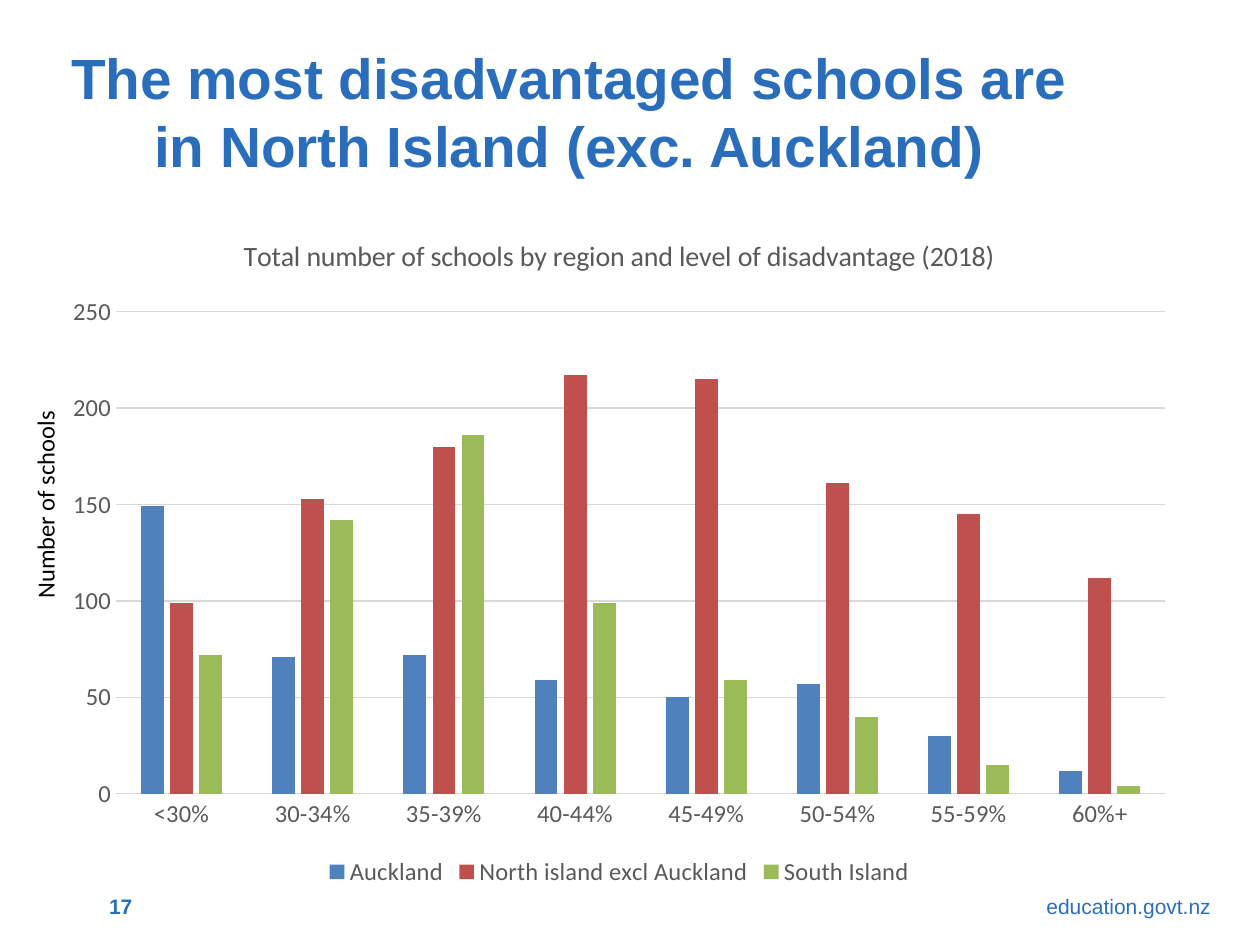
from pptx import Presentation
from pptx.chart.data import CategoryChartData
from pptx.dml.color import RGBColor
from pptx.enum.chart import XL_CHART_TYPE, XL_LEGEND_POSITION, XL_TICK_MARK
from pptx.enum.text import MSO_ANCHOR, MSO_AUTO_SIZE, PP_ALIGN
from pptx.util import Inches, Pt

COLUMN_CLUSTERED = XL_CHART_TYPE.COLUMN_CLUSTERED
LEGEND_BOTTOM = XL_LEGEND_POSITION.BOTTOM
NO_TICK = XL_TICK_MARK.NONE
TOP, MIDDLE = MSO_ANCHOR.TOP, MSO_ANCHOR.MIDDLE
NO_AUTOFIT = MSO_AUTO_SIZE.NONE
LEFT, CENTER, RIGHT = PP_ALIGN.LEFT, PP_ALIGN.CENTER, PP_ALIGN.RIGHT

THEME = {
    "brand": RGBColor.from_string("2A6EBB"),
    "black": RGBColor.from_string("000000"),
    "label": RGBColor.from_string("595959"),
    "grid": RGBColor.from_string("D9D9D9"),
    "series": [RGBColor.from_string(c) for c in ("4F81BD", "C0504D", "9BBB59")],
    "heading_font": "Arial",
    "chart_font": "Calibri",
    "title_size": Pt(32.4),
    "chart_title_size": Pt(16),
    "chart_size": Pt(14),
    "footer_size": Pt(12),
    "line_width": Pt(0.75),
}


def format_font(font, name, size, color, bold=False):
    for attribute, value in {"name": name, "size": size, "bold": bold}.items():
        setattr(font, attribute, value)
    font.color.rgb = color


def write_text(shape, text, alignment, anchor, font_format):
    text_frame = shape.text_frame
    frame_format = {"word_wrap": True, "auto_size": NO_AUTOFIT, "vertical_anchor": anchor}
    for attribute, value in frame_format.items():
        setattr(text_frame, attribute, value)
    paragraph = text_frame.paragraphs[0]
    paragraph.alignment = alignment
    run = paragraph.add_run()
    run.text = text
    format_font(run.font, *font_format)


presentation = Presentation()
presentation.slide_width = Inches(10)
presentation.slide_height = Inches(7.5)
slide = presentation.slides.add_slide(presentation.slide_layouts[5])

title = slide.shapes.title
title_place = {"left": 0.28, "top": 0.27, "width": 8.47, "height": 1.22}
for attribute, value in title_place.items():
    setattr(title, attribute, Inches(value))
title_format = (THEME["heading_font"], THEME["title_size"], THEME["brand"], True)
write_text(title, "The most disadvantaged schools are in North Island (exc. Auckland)",
           CENTER, MIDDLE, title_format)

chart_data = CategoryChartData()
chart_data.categories = ["<30%", "30-34%", "35-39%", "40-44%",
                         "45-49%", "50-54%", "55-59%", "60%+"]
schools_by_region = {
    "Auckland": [149, 71, 72, 59, 50, 57, 30, 12],
    "North island excl Auckland": [99, 153, 180, 217, 215, 161, 145, 112],
    "South Island": [72, 142, 186, 99, 59, 40, 15, 4],
}
for region, schools in schools_by_region.items():
    chart_data.add_series(region, schools)

chart = slide.shapes.add_chart(COLUMN_CLUSTERED, Inches(0.4), Inches(1.68),
                               Inches(9.03), Inches(5.4), chart_data).chart
format_font(chart.font, THEME["chart_font"], THEME["chart_size"], THEME["black"])

chart.has_title = True
chart.chart_title.include_in_layout = False
chart_title_paragraph = chart.chart_title.text_frame.paragraphs[0]
chart_title_run = chart_title_paragraph.add_run()
chart_title_run.text = "Total number of schools by region and level of disadvantage (2018)"
format_font(chart_title_run.font, THEME["chart_font"], THEME["chart_title_size"], THEME["label"])

chart.has_legend = True
chart.legend.position = LEGEND_BOTTOM
chart.legend.include_in_layout = False

category_axis, value_axis = chart.category_axis, chart.value_axis
for axis in (category_axis, value_axis):
    axis.major_tick_mark = NO_TICK
    axis.minor_tick_mark = NO_TICK
for labelled in (category_axis.tick_labels, value_axis.tick_labels, chart.legend):
    format_font(labelled.font, THEME["chart_font"], THEME["chart_size"], THEME["label"])

value_scale = {"minimum_scale": 0, "maximum_scale": 250, "major_unit": 50,
               "has_major_gridlines": True}
for attribute, value in value_scale.items():
    setattr(value_axis, attribute, value)
value_axis.format.line.fill.background()
for line in (category_axis.format.line, value_axis.major_gridlines.format.line):
    line.color.rgb = THEME["grid"]
    line.width = THEME["line_width"]

plot = chart.plots[0]
for attribute, value in {"gap_width": 219, "overlap": -27, "vary_by_categories": False}.items():
    setattr(plot, attribute, value)
for series, color in zip(plot.series, THEME["series"]):
    series.format.fill.solid()
    series.format.fill.fore_color.rgb = color

axis_title = slide.shapes.add_textbox(Inches(0.19), Inches(2.21), Inches(0.44), Inches(2.64))
axis_title_format = (THEME["chart_font"], THEME["chart_size"], THEME["black"])
write_text(axis_title, "Number of schools", LEFT, TOP, axis_title_format)
axis_title.element.txBody.bodyPr.set("vert", "vert270")

footers = [
    ("17", (0.28, 7.09, 0.87, 0.2), MIDDLE, True),
    ("education.govt.nz", (7.44, 7.04, 2.27, 0.3), TOP, False),
]
for text, place, anchor, bold in footers:
    footer = slide.shapes.add_textbox(*[Inches(value) for value in place])
    footer_format = (THEME["heading_font"], THEME["footer_size"], THEME["brand"], bold)
    write_text(footer, text, RIGHT, anchor, footer_format)

presentation.save("out.pptx")
